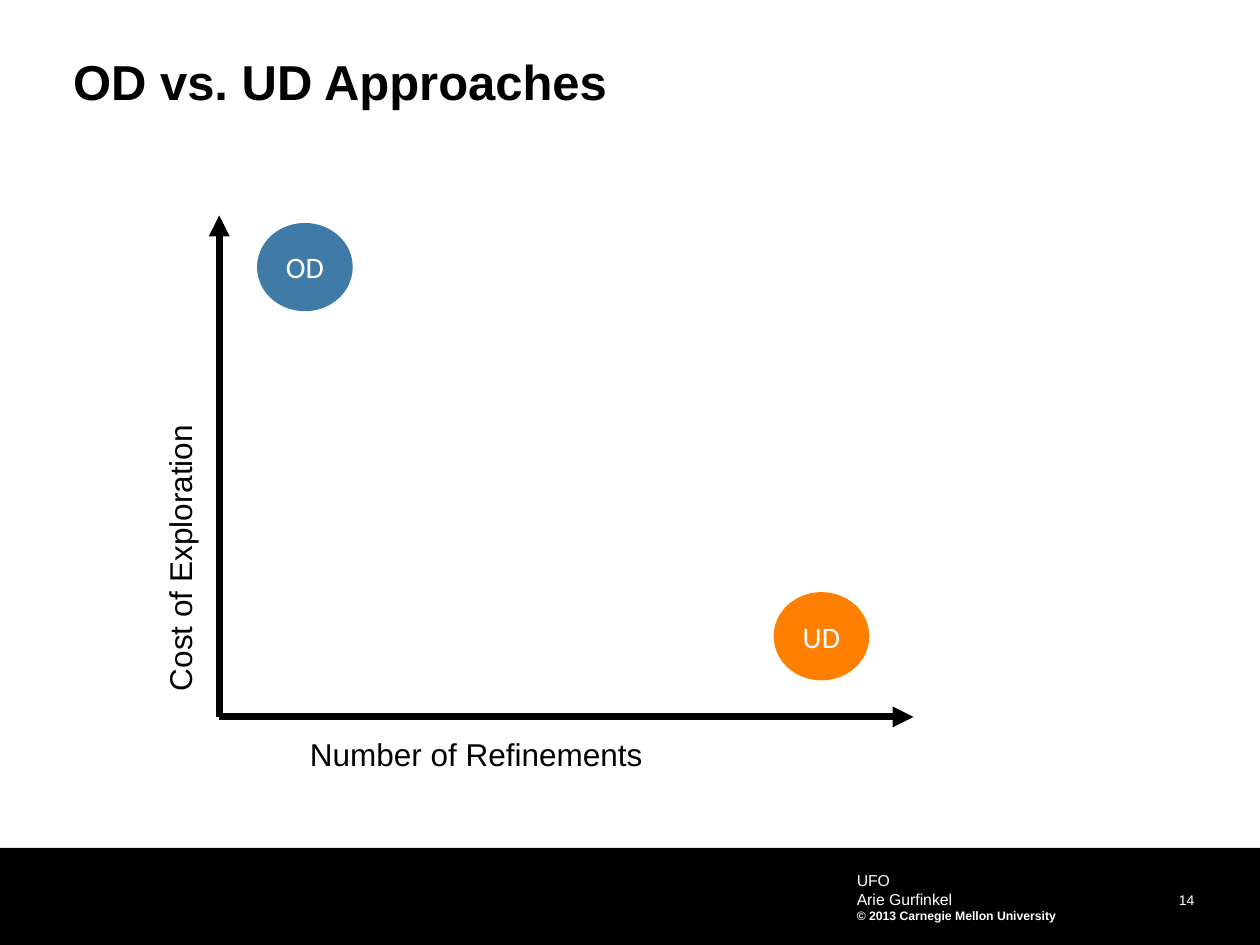
from lxml.etree import SubElement
from pptx import Presentation
from pptx.dml.color import RGBColor
from pptx.enum.shapes import MSO_CONNECTOR, MSO_SHAPE
from pptx.enum.text import MSO_ANCHOR as Anchor, PP_ALIGN as Align
from pptx.oxml.ns import qn
from pptx.util import Inches, Pt

COLORS = {"ink": "000000", "light": "FFFFFF", "od": "407AA6", "ud": "FF8000"}
ORIGIN = (1.74, 5.69)


def rgb(name):
    return RGBColor.from_string(COLORS[name])


def box(*lengths):
    return [Inches(length) for length in lengths]


def set_frame(frame, side, edge, anchor=Anchor.TOP, wrap=True):
    frame.margin_left = frame.margin_right = Inches(side)
    frame.margin_top = frame.margin_bottom = Inches(edge)
    frame.vertical_anchor = anchor
    frame.word_wrap = wrap


def add_run(paragraph, words, size, color="ink", bold=False, font="Arial"):
    run = paragraph.add_run()
    run.text = words
    run.font.name = font
    run.font.size = Pt(size)
    run.font.bold = bold
    run.font.color.rgb = rgb(color)


def add_plain_shape(slide, kind, place, color):
    shape = slide.shapes.add_shape(kind, *box(*place))
    shape.shadow.inherit = False
    shape.fill.solid()
    shape.fill.fore_color.rgb = rgb(color)
    shape.line.fill.background()
    return shape


def add_title(slide, words):
    title = slide.shapes.title
    title.left, title.top, title.width, title.height = box(0.58, 0.46, 8.92, 0.42)
    set_frame(title.text_frame, 0, 0)
    heading = title.text_frame.paragraphs[0]
    heading.alignment = Align.LEFT
    heading.line_spacing = 0.9
    add_run(heading, words, 28, bold=True)


def add_footer(slide):
    add_plain_shape(slide, MSO_SHAPE.RECTANGLE, (0, 6.73, 10, 0.77), "ink")

    number = slide.shapes.add_textbox(*box(8.56, 7.03, 0.92, 0.18)).text_frame
    set_frame(number, 0, 0, Anchor.MIDDLE)
    number.paragraphs[0].alignment = Align.RIGHT
    number.paragraphs[0].line_spacing = Pt(13)
    add_run(number.paragraphs[0], "14", 8, "light")

    credits = slide.shapes.add_textbox(*box(6.75, 6.86, 2.5, 0.52)).text_frame
    set_frame(credits, 0.05, 0.05, Anchor.MIDDLE)
    add_run(credits.paragraphs[0], "UFO", 9, "light")
    add_run(credits.add_paragraph(), "Arie Gurfinkel", 9, "light")
    add_run(credits.add_paragraph(), "© 2013 Carnegie Mellon University", 7, "light", True)


def add_axis(slide, tip):
    axis = slide.shapes.add_connector(MSO_CONNECTOR.STRAIGHT, *box(*ORIGIN, *tip))
    axis.line.color.rgb = rgb("ink")
    axis.line.width = Pt(4)
    SubElement(axis.line._get_or_add_ln(), qn("a:tailEnd"), type="triangle")
    SubElement(axis._element.spPr, qn("a:effectLst"))


def add_axis_label(slide, words, place, rotation=0, wrap=True):
    label = slide.shapes.add_textbox(*box(*place))
    label.rotation = rotation
    set_frame(label.text_frame, 0.07, 0.04, wrap=wrap)
    add_run(label.text_frame.paragraphs[0], words, 18)


def add_approach(slide, words, left, top, color):
    approach = add_plain_shape(slide, MSO_SHAPE.OVAL, (left, top, 0.76, 0.7), color)
    set_frame(approach.text_frame, 0.07, 0.04, Anchor.MIDDLE)
    caption = approach.text_frame.paragraphs[0]
    caption.alignment = Align.CENTER
    add_run(caption, words, 17, "light", font="Calibri")


def main():
    deck = Presentation()
    deck.slide_width, deck.slide_height = box(10, 7.5)
    slide = deck.slides.add_slide(deck.slide_layouts.get_by_name("Title Only"))

    add_footer(slide)
    add_title(slide, "OD vs. UD Approaches")
    add_axis(slide, (ORIGIN[0], 1.71))
    add_axis(slide, (7.25, ORIGIN[1]))
    add_approach(slide, "OD", 2.04, 1.77, "od")
    add_approach(slide, "UD", 6.14, 4.7, "ud")
    add_axis_label(slide, "Number of Refinements", (2.39, 5.79, 2.81, 0.37), wrap=False)
    add_axis_label(slide, "Cost of Exploration", (-0.7, 3.25, 4.24, 0.37), rotation=270)
    deck.save("out.pptx")


if __name__ == "__main__":
    main()
